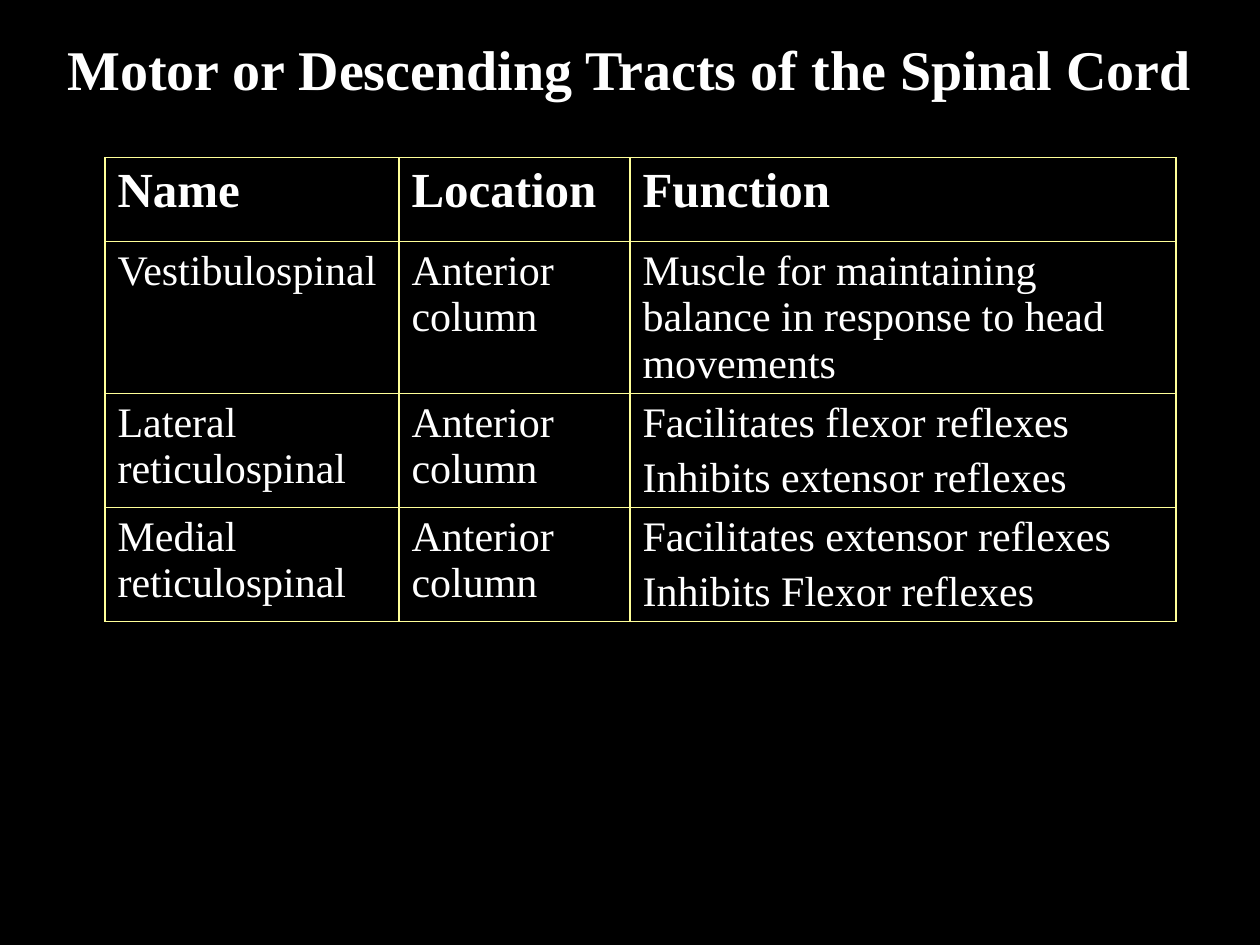
import pptx
import pptx.dml.color
import pptx.enum.text
import pptx.oxml
import pptx.oxml.ns
import pptx.util

Pt = pptx.util.Pt
RGB = pptx.dml.color.RGBColor.from_string

# Content: each cell is a list of paragraphs
TITLE = "Motor or Descending Tracts of the Spinal Cord"
ROWS = [
    [["Name"], ["Location"], ["Function"]],
    [["Vestibulospinal"], ["Anterior column"],
     ["Muscle for maintaining balance in response to head movements"]],
    [["Lateral reticulospinal"], ["Anterior column"],
     ["Facilitates flexor reflexes", "Inhibits extensor reflexes"]],
    [["Medial reticulospinal"], ["Anterior column"],
     ["Facilitates extensor reflexes", "Inhibits Flexor reflexes"]],
]

# Layout, in points
SLIDE_W, SLIDE_H = 720, 540
TITLE_H = 78
TABLE_X, TABLE_Y = 60, 90
COL_WIDTHS = [168, 132, 312]
ROW_HEIGHTS = [48, 87, 65, 65]

THEME = {
    "font": "Times New Roman", "text": "FFFFFF", "back": "000000",
    "border": "FFFF99", "border_w": 1,
    "title": 32, "head": 28, "body": 24, "space_before": 0.2,
}


def style(p, size, bold):
    p.font.name = THEME["font"]
    p.font.size = Pt(size)
    p.font.bold = bold
    p.font.color.rgb = RGB(THEME["text"])


def add_borders(cell):
    tc_pr = cell._tc.get_or_add_tcPr()
    for i, side in enumerate(("lnL", "lnR", "lnT", "lnB")):
        # Borders come before the fill in the cell properties
        tc_pr.insert(i, pptx.oxml.parse_xml(
            f'<a:{side} {pptx.oxml.ns.nsdecls("a")} w="{Pt(THEME["border_w"])}">'
            f'<a:solidFill><a:srgbClr val="{THEME["border"]}"/></a:solidFill>'
            f'</a:{side}>'))


def fill_cell(cell, lines, size, bold):
    cell.fill.solid()
    cell.fill.fore_color.rgb = RGB(THEME["back"])
    add_borders(cell)
    tf = cell.text_frame
    tf.text = "\n".join(lines)
    for p in tf.paragraphs:
        style(p, size, bold)
        p.space_before = Pt(size * THEME["space_before"])


# Slide and background
prs = pptx.Presentation()
prs.slide_width, prs.slide_height = Pt(SLIDE_W), Pt(SLIDE_H)
s = prs.slides.add_slide(prs.slide_layouts[5])
s.background.fill.solid()
s.background.fill.fore_color.rgb = RGB(THEME["back"])

# Title
title = s.shapes.title
title.left, title.top = Pt(0), Pt(0)
title.width, title.height = Pt(SLIDE_W), Pt(TITLE_H)
tf = title.text_frame
tf.text = TITLE
tf.vertical_anchor = pptx.enum.text.MSO_ANCHOR.MIDDLE
tf.paragraphs[0].alignment = pptx.enum.text.PP_ALIGN.CENTER
style(tf.paragraphs[0], THEME["title"], True)

# Table of tracts
table = s.shapes.add_table(
    len(ROWS), len(COL_WIDTHS), Pt(TABLE_X), Pt(TABLE_Y),
    Pt(sum(COL_WIDTHS)), Pt(sum(ROW_HEIGHTS))).table
table.horz_banding = False
for col, width in zip(table.columns, COL_WIDTHS):
    col.width = Pt(width)
for r, (row, height) in enumerate(zip(ROWS, ROW_HEIGHTS)):
    table.rows[r].height = Pt(height)
    for c, lines in enumerate(row):
        fill_cell(table.cell(r, c), lines,
                  THEME["body" if r else "head"], r == 0)

prs.save("out.pptx")
